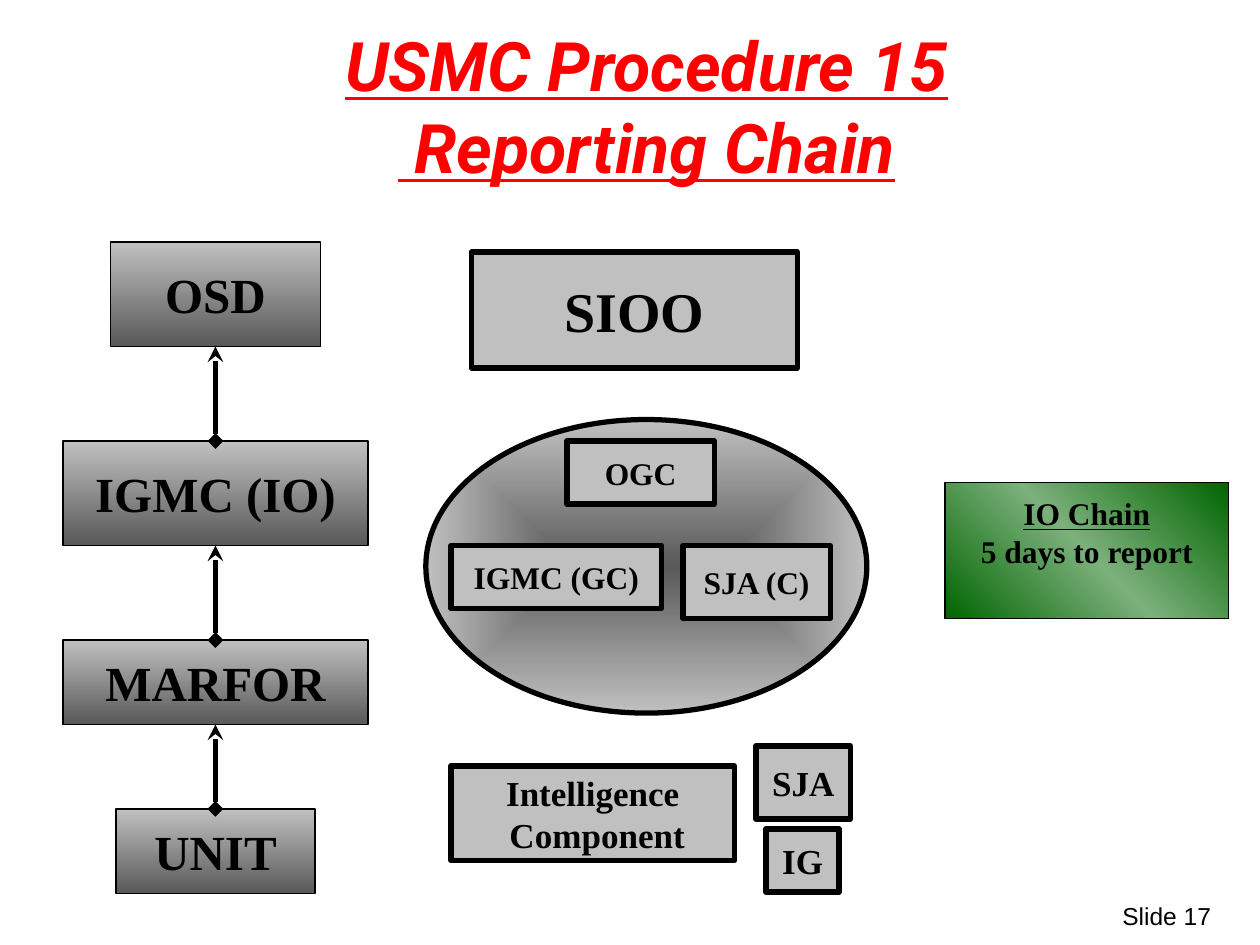
"""Build the USMC Procedure 15 reporting chain slide."""
import pptx
import pptx.dml.color
import pptx.enum.shapes
import pptx.enum.text
import pptx.oxml
import pptx.oxml.ns
import pptx.util

Inches = pptx.util.Inches
Pt = pptx.util.Pt
SHAPES = pptx.enum.shapes.MSO_SHAPE
MIDDLE = pptx.enum.text.MSO_ANCHOR.MIDDLE
CENTER = pptx.enum.text.PP_ALIGN.CENTER
NAMESPACE = pptx.oxml.ns.nsdecls("a")
LINEAR = '<a:lin ang="{}" scaled="0"/>'
RADIAL = '<a:path path="shape"><a:fillToRect l="50000" t="50000" r="50000" b="50000"/></a:path>'
GRADIENTS = {
    "chain": (["C0C0C0", "595959"], LINEAR.format(90 * 60000)),
    "green": (["006600", "7CB07C", "006600"], LINEAR.format(315 * 60000)),
    "ellipse": (["595959", "C0C0C0"], RADIAL),
}


def color(value):
    return pptx.dml.color.RGBColor.from_string(value)


def add_box(kind, bounds, fill, line_width, lines=(), size=18):
    shape = slide.shapes.add_shape(kind, *map(Inches, bounds))
    shape.shadow.inherit = False
    shape.line.color.rgb = color("000000")
    shape.line.width = Pt(line_width)
    if fill in GRADIENTS:
        colors, direction = GRADIENTS[fill]
        stops = "".join(
            f'<a:gs pos="{100000 * index // (len(colors) - 1)}"><a:srgbClr val="{value}"/></a:gs>'
            for index, value in enumerate(colors))
        shape.fill.gradient()
        properties = shape._element.spPr
        properties.replace(properties.find(pptx.oxml.ns.qn("a:gradFill")), pptx.oxml.parse_xml(
            f'<a:gradFill {NAMESPACE} rotWithShape="1"><a:gsLst>{stops}</a:gsLst>{direction}</a:gradFill>'))
    else:
        shape.fill.solid()
        shape.fill.fore_color.rgb = color(fill)
    frame = shape.text_frame
    frame.word_wrap = False
    frame.vertical_anchor = MIDDLE
    for index, text in enumerate(lines):
        paragraph = frame.add_paragraph() if index else frame.paragraphs[0]
        paragraph.text = text
        paragraph.alignment = CENTER
        paragraph.font.name = "Times New Roman"
        paragraph.font.size = Pt(size)
        paragraph.font.bold = True
        paragraph.font.color.rgb = color("000000")
    return shape


presentation = pptx.Presentation()
presentation.slide_width = Inches(10)
presentation.slide_height = Inches(7.5)
slide = presentation.slides.add_slide(presentation.slide_layouts[6])

number_box = slide.shapes.add_textbox(Inches(8.81), Inches(7.1), Inches(1.1), Inches(0.4))
number_box.text_frame.word_wrap = True
paragraph = number_box.text_frame.paragraphs[0]
paragraph.text = "Slide 17"
paragraph.font.name = "Arial"
paragraph.font.size = Pt(14)
paragraph.font.color.rgb = color("000000")

title_box = slide.shapes.add_textbox(Inches(2.42), Inches(0.25), Inches(5.42), Inches(1.17))
title_box.text_frame.word_wrap = True
title_box.text_frame.vertical_anchor = MIDDLE
title_box.text_frame.text = "USMC Procedure 15\n Reporting Chain"
for paragraph in title_box.text_frame.paragraphs:
    paragraph.alignment = CENTER
    paragraph.font.name = "Roboto"
    paragraph.font.size = Pt(39)
    paragraph.font.bold = True
    paragraph.font.italic = True
    paragraph.font.underline = True
    paragraph.font.color.rgb = color("FF0000")

add_box(SHAPES.OVAL, (3.38, 3.33, 3.5, 2.33), "ellipse", 3)

offices = [
    ((3.74, 2, 2.59, 0.92), ["SIOO"], 32),
    ((4.5, 3.5, 1.17, 0.5), ["OGC"], 18),
    ((3.58, 4.33, 1.67, 0.5), ["IGMC (GC)"], 18),
    ((5.42, 4.33, 1.17, 0.58), ["SJA (C)"], 18),
    ((3.58, 6.08, 2.25, 0.75), ["Intelligence", " Component"], 20),
    ((6, 5.92, 0.75, 0.58), ["SJA"], 20),
    ((6.08, 6.58, 0.58, 0.5), ["IG"], 20),
]
for bounds, lines, size in offices:
    add_box(SHAPES.RECTANGLE, bounds, "C0C0C0", 3, lines, size)

deadline = add_box(SHAPES.RECTANGLE, (7.5, 3.83, 2.25, 1.08), "green", 0.75,
                   ["IO Chain", "5 days to report"])
deadline.text_frame.margin_bottom = Inches(0.34)
deadline.text_frame.paragraphs[0].font.underline = True

chain_center = 1.71
chain = [
    ("OSD", 1.92, 1.67, 0.83),
    ("IGMC (IO)", 3.5, 2.42, 0.83),
    ("MARFOR", 5.08, 2.42, 0.67),
    ("UNIT", 6.42, 1.58, 0.67),
]
for name, top, width, height in chain:
    add_box(SHAPES.RECTANGLE, (chain_center - width / 2, top, width, height),
            "chain", 0.75, [name], 28)

for upper, lower in zip(chain, chain[1:]):
    arrow = slide.shapes.add_connector(
        pptx.enum.shapes.MSO_CONNECTOR.STRAIGHT,
        Inches(chain_center), Inches(lower[1]),
        Inches(chain_center), Inches(upper[1] + upper[3]))
    arrow.line.color.rgb = color("000000")
    arrow.line.width = Pt(3)
    outline = arrow.line._get_or_add_ln()
    for tag, head in (("headEnd", "diamond"), ("tailEnd", "stealth")):
        outline.append(pptx.oxml.parse_xml(f'<a:{tag} {NAMESPACE} type="{head}"/>'))
    arrow._element.spPr.append(pptx.oxml.parse_xml(f"<a:effectLst {NAMESPACE}/>"))

presentation.save("out.pptx")
